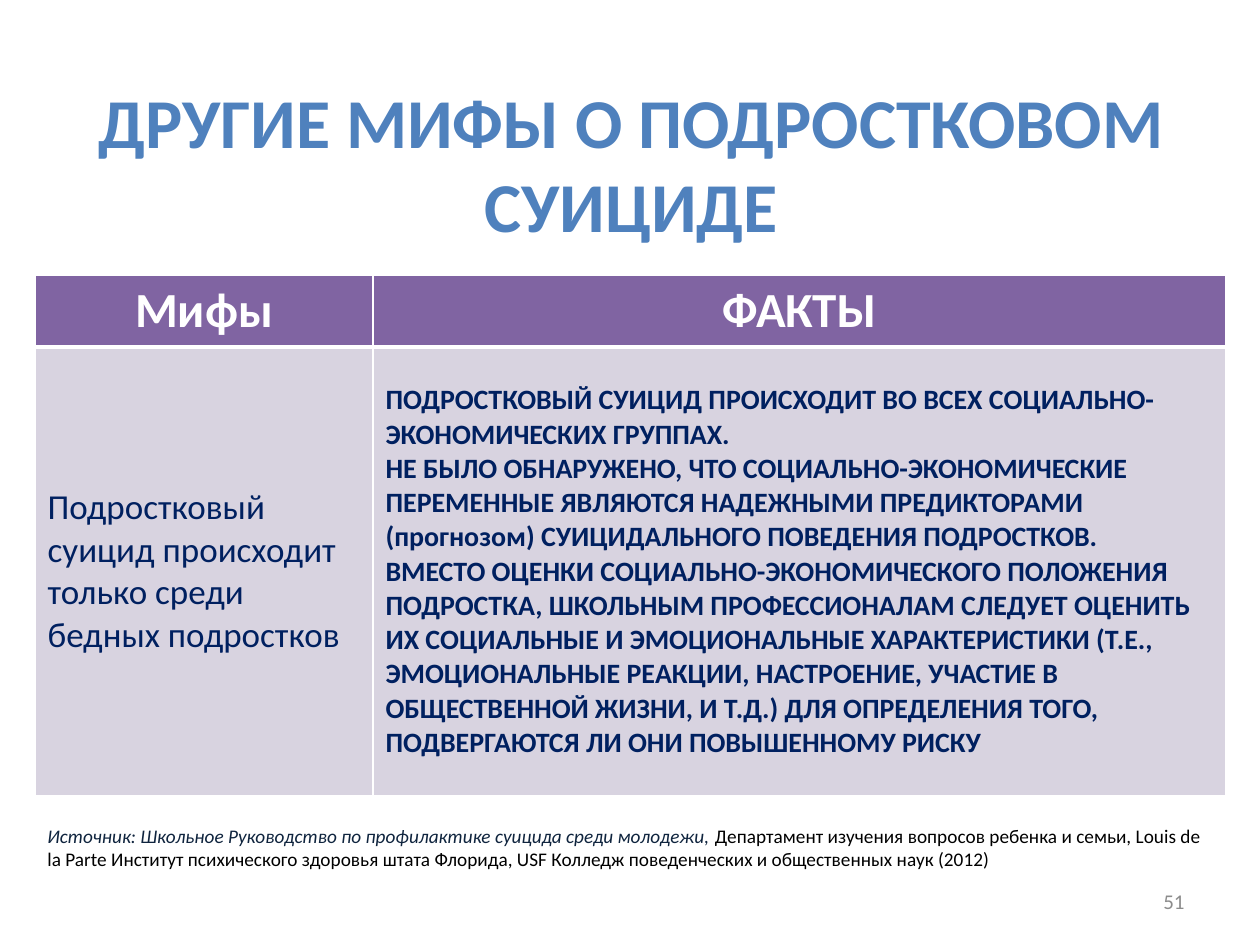
"""Build the slide on myths and facts about teenage suicide."""
from lxml.etree import SubElement
from pptx import Presentation
from pptx.dml.color import RGBColor
from pptx.enum.text import MSO_ANCHOR, MSO_AUTO_SIZE, PP_ALIGN
from pptx.oxml.ns import qn
from pptx.util import Pt

PX = 914400 // 126
BLUE = RGBColor(0x4F, 0x81, 0xBD)
NAVY = RGBColor(0x00, 0x20, 0x60)
INK = RGBColor(0x0F, 0x24, 0x3E)
BLACK = RGBColor(0, 0, 0)
GRAY = RGBColor(0x8C, 0x8C, 0x8C)
WHITE = RGBColor(255, 255, 255)
PURPLE = RGBColor(0x80, 0x64, 0xA2)
LILAC = RGBColor(0xD8, 0xD3, 0xE0)

TITLE = "ДРУГИЕ МИФЫ О ПОДРОСТКОВОМ СУИЦИДЕ"
HEADS = ["Мифы", "ФАКТЫ"]
MYTH = ["Подростковый суицид происходит только среди бедных подростков"]
FACTS = [
    "ПОДРОСТКОВЫЙ СУИЦИД ПРОИСХОДИТ ВО ВСЕХ СОЦИАЛЬНО-ЭКОНОМИЧЕСКИХ ГРУППАХ.",
    "НЕ БЫЛО ОБНАРУЖЕНО, ЧТО СОЦИАЛЬНО-ЭКОНОМИЧЕСКИЕ ПЕРЕМЕННЫЕ ЯВЛЯЮТСЯ "
    "НАДЕЖНЫМИ ПРЕДИКТОРАМИ (прогнозом) СУИЦИДАЛЬНОГО ПОВЕДЕНИЯ ПОДРОСТКОВ.",
    "ВМЕСТО ОЦЕНКИ СОЦИАЛЬНО-ЭКОНОМИЧЕСКОГО ПОЛОЖЕНИЯ ПОДРОСТКА, ШКОЛЬНЫМ "
    "ПРОФЕССИОНАЛАМ СЛЕДУЕТ ОЦЕНИТЬ ИХ СОЦИАЛЬНЫЕ И ЭМОЦИОНАЛЬНЫЕ ХАРАКТЕРИСТИКИ "
    "(Т.Е., ЭМОЦИОНАЛЬНЫЕ РЕАКЦИИ, НАСТРОЕНИЕ, УЧАСТИЕ В ОБЩЕСТВЕННОЙ ЖИЗНИ, И Т.Д.) "
    "ДЛЯ ОПРЕДЕЛЕНИЯ ТОГО, ПОДВЕРГАЮТСЯ ЛИ ОНИ ПОВЫШЕННОМУ РИСКУ",
]
SOURCE = "Источник: Школьное Руководство по профилактике суицида среди молодежи, "
CREDIT = (
    "Департамент изучения вопросов ребенка и семьи, Louis de la Parte Институт "
    "психического здоровья штата Флорида, USF Колледж поведенческих и общественных наук (2012)"
)
NUMBER = "51"

COLS, ROWS = (338, 853), (72, 449)
HEAD = {"size": Pt(28), "bold": True, "color": WHITE}
CELLS = [
    [([text], HEAD, PP_ALIGN.CENTER, PURPLE) for text in HEADS],
    [
        (MYTH, {"size": Pt(20), "bold": False, "color": NAVY}, PP_ALIGN.LEFT, LILAC),
        (FACTS, {"size": Pt(16), "bold": True, "color": NAVY}, PP_ALIGN.LEFT, LILAC),
    ],
]


def place(shape, *box):
    for name, size in zip(("left", "top", "width", "height"), box):
        setattr(shape, name, size * PX)


def add_run(para, text, color, **form):
    run = para.add_run()
    run.text = text
    for key, value in {"name": "Calibri", **form}.items():
        setattr(run.font, key, value)
    run.font.color.rgb = color


def write(frame, texts, form, align):
    for i, text in enumerate(texts):
        para = frame.add_paragraph() if i else frame.paragraphs[0]
        para.alignment = align
        add_run(para, text, **form)


def add_box(slide, *box):
    frame = slide.shapes.add_textbox(*(n * PX for n in box)).text_frame
    frame.word_wrap = True
    return frame


def edge(cell, base):
    props = cell._tc.get_or_add_tcPr()
    for side in "LRTB":
        width = base if side == "B" else 1
        line = SubElement(props, qn(f"a:ln{side}"), w=str(Pt(width)))
        fill = SubElement(line, qn("a:solidFill"))
        SubElement(fill, qn("a:srgbClr"), val=str(WHITE))


def add_grid(slide, left, top):
    frame = slide.shapes.add_table(
        len(ROWS), len(COLS), left * PX, top * PX, sum(COLS) * PX, sum(ROWS) * PX
    )
    table = frame.table
    for col, width in zip(table.columns, COLS):
        col.width = width * PX
    for r, row in enumerate(CELLS):
        table.rows[r].height = ROWS[r] * PX
        for c, (texts, form, align, fill) in enumerate(row):
            cell = table.cell(r, c)
            edge(cell, 1 if r else 3)
            cell.fill.solid()
            cell.fill.fore_color.rgb = fill
            cell.vertical_anchor = MSO_ANCHOR.MIDDLE if r else MSO_ANCHOR.TOP
            write(cell.text_frame, texts, form, align)


def main():
    deck = Presentation()
    deck.slide_width, deck.slide_height = 1260 * PX, 945 * PX
    slide = deck.slides.add_slide(deck.slide_layouts[5])

    title = slide.shapes.title
    place(title, 23, 101, 1216, 123)
    title.text_frame.auto_size = MSO_AUTO_SIZE.NONE
    title.text_frame.vertical_anchor = MSO_ANCHOR.MIDDLE
    form = {"size": Pt(40), "bold": True, "color": BLUE}
    write(title.text_frame, [TITLE], form, PP_ALIGN.CENTER)

    page = add_box(slide, 903, 876, 294, 50)
    page.vertical_anchor = MSO_ANCHOR.MIDDLE
    write(page, [NUMBER], {"size": Pt(12), "color": GRAY}, PP_ALIGN.RIGHT)

    add_grid(slide, 35, 275)

    note = add_box(slide, 35, 818, 1191, 59)
    note.auto_size = MSO_AUTO_SIZE.SHAPE_TO_FIT_TEXT
    para = note.paragraphs[0]
    add_run(para, SOURCE, INK, size=Pt(11), italic=True)
    add_run(para, CREDIT, BLACK, size=Pt(11), italic=False)

    deck.save("out.pptx")


if __name__ == "__main__":
    main()
